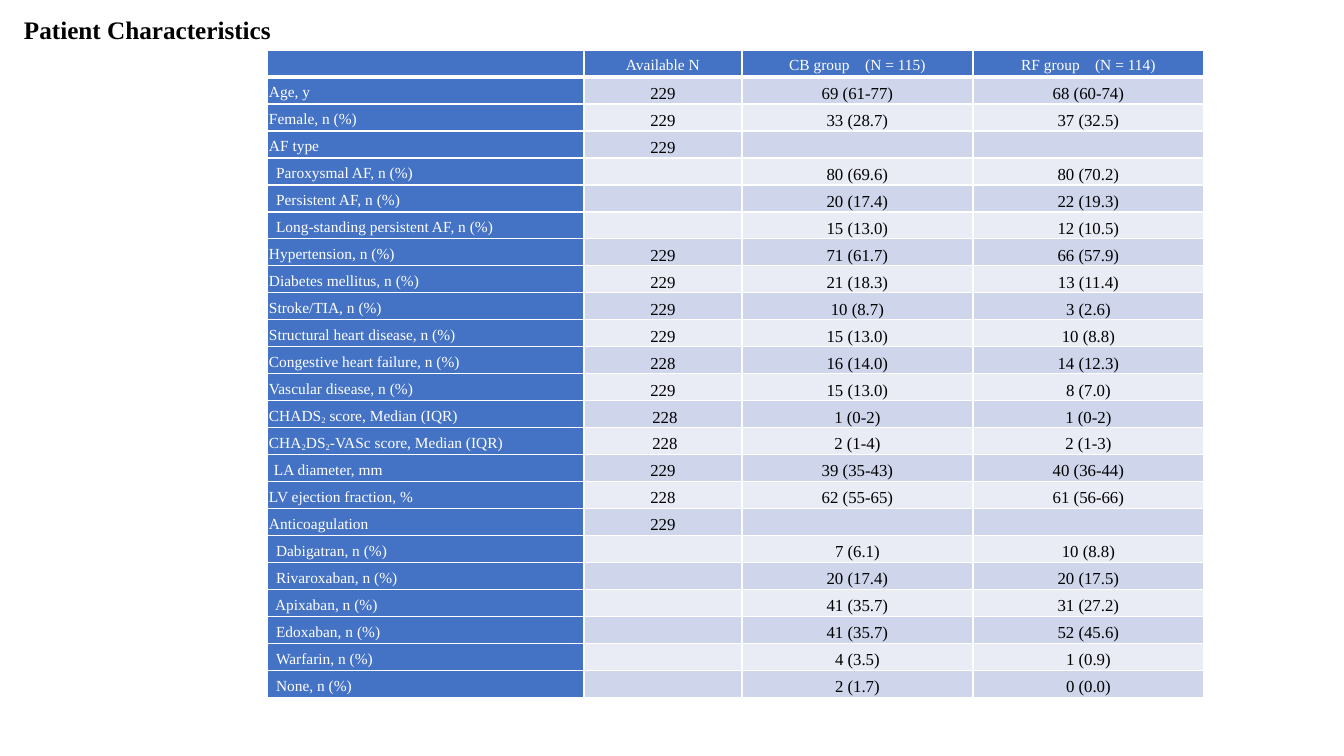
from pptx import Presentation
from pptx.dml.color import RGBColor
from pptx.enum.text import MSO_AUTO_SIZE as Auto, PP_ALIGN as Align
from pptx.oxml.xmlchemy import OxmlElement as make
from pptx.util import Pt

TITLE = "Patient Characteristics"
HEAD = ("", "Available N", "CB group\t(N = 115)", "RF group\t(N = 114)")
ROWS = [
    (2, "Age, y", "229", "69 (61-77)", "68 (60-74)"),
    (2, "Female, n (%)", "229", "33 (28.7)", "37 (32.5)"),
    (2, "AF type", "229", "", ""),
    (9, "Paroxysmal AF, n (%)", "", "80 (69.6)", "80 (70.2)"),
    (9, "Persistent AF, n (%)", "", "20 (17.4)", "22 (19.3)"),
    (9, "Long-standing persistent AF, n (%)", "", "15 (13.0)", "12 (10.5)"),
    (2, "Hypertension, n (%)", "229", "71 (61.7)", "66 (57.9)"),
    (2, "Diabetes mellitus, n (%)", "229", "21 (18.3)", "13 (11.4)"),
    (2, "Stroke/TIA, n (%)", "229", "10 (8.7)", "3 (2.6)"),
    (2, "Structural heart disease, n (%)", "229", "15 (13.0)", "10 (8.8)"),
    (2, "Congestive heart failure, n (%)", "228", "16 (14.0)", "14 (12.3)"),
    (2, "Vascular disease, n (%)", "229", "15 (13.0)", "8 (7.0)"),
    (2, "CHADS|2| score, Median (IQR)", "228", "1 (0-2)", "1 (0-2)"),
    (2, "CHA|2|DS|2|-VASc score, Median (IQR)", "228", "2 (1-4)", "2 (1-3)"),
    (7, "LA diameter, mm", "229", "39 (35-43)", "40 (36-44)"),
    (2, "LV ejection fraction, %", "228", "62 (55-65)", "61 (56-66)"),
    (2, "Anticoagulation", "229", "", ""),
    (9, "Dabigatran, n (%)", "", "7 (6.1)", "10 (8.8)"),
    (9, "Rivaroxaban, n (%)", "", "20 (17.4)", "20 (17.5)"),
    (8, "Apixaban, n (%)", "", "41 (35.7)", "31 (27.2)"),
    (9, "Edoxaban, n (%)", "", "41 (35.7)", "52 (45.6)"),
    (9, "Warfarin, n (%)", "", "4 (3.5)", "1 (0.9)"),
    (9, "None, n (%)", "", "2 (1.7)", "0 (0.0)"),
]
WIDTHS = (317, 158, 231, 231)
LEFT, TOP, STEP = 267, 50, 27
TABS = {2: 76, 3: 74}
BLUE, BANDS = "4472C4", ("CFD5EA", "E9EBF5")
WHITE, BLACK = "FFFFFF", "000000"


def px(n):
    return round(n * 914400 / 100.8)


def rgb(code):
    return RGBColor.from_string(code)


def write(frame, text, size=11, color=WHITE, bold=False, align=Align.LEFT,
          indent=0, line=None, tab=None):
    para = frame.paragraphs[0]
    para.alignment = align
    if line:
        para.line_spacing = Pt(line)
    props = para._p.get_or_add_pPr()
    if indent:
        props.set("marL", str(px(indent)))
    if tab:
        tabs, stop = make("a:tabLst"), make("a:tab")
        stop.set("pos", str(px(tab)))
        stop.set("algn", "l")
        tabs.append(stop)
        props.append(tabs)
    if not text:
        end = make("a:endParaRPr")
        end.set("sz", str(size * 100))
        para._p.append(end)
        return
    for i, part in enumerate(text.split("|")):
        run = para.add_run()
        run.text = part
        font = run.font
        font.name, font.bold = "Times New Roman", bold
        font.size = Pt(10.5 if i % 2 else size)
        font.color.rgb = rgb(color)
        if i % 2:
            font._element.set("baseline", "-16000")


def edge(cell, side, width):
    line, fill, tint = make("a:ln" + side), make("a:solidFill"), make("a:srgbClr")
    line.set("w", str(Pt(width)))
    tint.set("val", WHITE)
    fill.append(tint)
    line.append(fill)
    cell._tc.get_or_add_tcPr().append(line)


def paint(cell, row, col):
    thick = {(0, "B"), (1, "T")}
    for side in "LRTB":
        edge(cell, side, 3 if (row, side) in thick else 1)
    cell.fill.solid()
    blue = row == 0 or col == 0
    cell.fill.fore_color.rgb = rgb(BLUE if blue else BANDS[(row - 1) % 2])
    cell.margin_left = cell.margin_right = cell.margin_bottom = 0
    cell.margin_top = px(7 if blue else 6)


def main():
    deck = Presentation()
    deck.slide_width, deck.slide_height = px(1344), px(756)
    slide = deck.slides.add_slide(deck.slide_layouts[6])

    grid = slide.shapes.add_table(
        len(ROWS) + 1, len(WIDTHS), px(LEFT), px(TOP),
        px(sum(WIDTHS)), px(STEP * (len(ROWS) + 1))).table
    grid.first_row = grid.horz_banding = False
    for col, width in zip(grid.columns, WIDTHS):
        col.width = px(width)
    for row in grid.rows:
        row.height = px(STEP)

    for r, (indent, *texts) in enumerate([(0, *HEAD)] + ROWS):
        for c, text in enumerate(texts):
            cell = grid.cell(r, c)
            paint(cell, r, c)
            if r == 0:
                style = dict(align=Align.CENTER, tab=TABS.get(c))
            elif c == 0:
                style = dict(indent=indent)
            else:
                shift = 4 if c == 1 and "|" in texts[0] else 0
                style = dict(size=12, color=BLACK, align=Align.CENTER,
                             line=14.2, indent=shift)
            write(cell.text_frame, text, **style)

    frame = slide.shapes.add_textbox(px(23), px(13), px(250), px(33)).text_frame
    frame.word_wrap = True
    frame.auto_size = Auto.SHAPE_TO_FIT_TEXT
    frame.margin_left = frame.margin_right = frame.margin_bottom = 0
    frame.margin_top = px(1)
    write(frame, TITLE, size=18, color=BLACK, bold=True, indent=1)
    deck.save("out.pptx")


if __name__ == "__main__":
    main()
